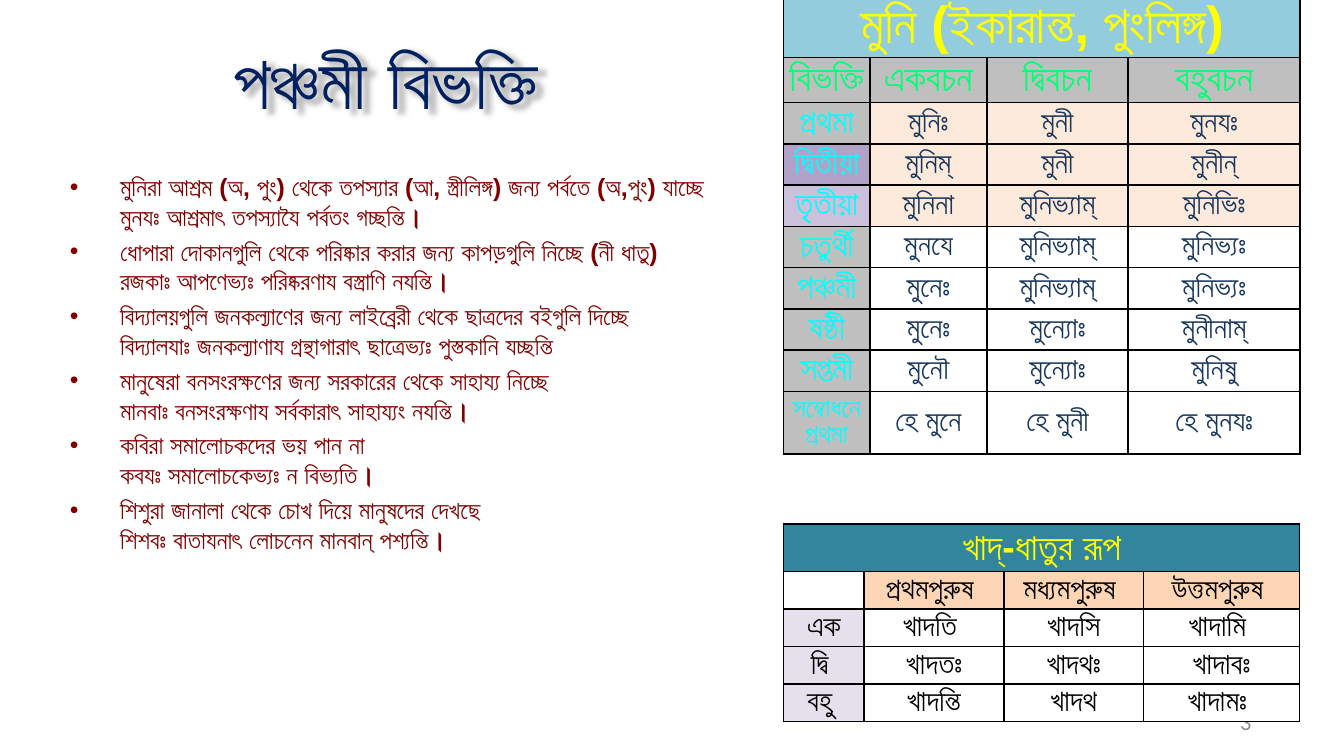
"""Build a Bengali-script slide on the fifth case, with a declension and a conjugation table."""
from dataclasses import dataclass

from lxml import etree
from pptx import Presentation
from pptx.dml.color import RGBColor
from pptx.enum.text import MSO_ANCHOR, PP_ALIGN
from pptx.oxml.ns import qn
from pptx.util import Cm, Pt

CENTER, LEFT, RIGHT = PP_ALIGN.CENTER, PP_ALIGN.LEFT, PP_ALIGN.RIGHT
TOP, MIDDLE = MSO_ANCHOR.TOP, MSO_ANCHOR.MIDDLE
BLACK, WHITE, YELLOW, CYAN, GREY = "000000", "FFFFFF", "FFFF00", "00FFFF", "BFBFBF"
PEACH = "FDEADA"
HANGING = Cm(0.95)


@dataclass(frozen=True)
class Style:
    size: float
    color: str
    font: str = "Arial"
    bold: bool = True


@dataclass(frozen=True)
class TextBox:
    left: float
    top: float
    width: float
    height: float
    paragraphs: tuple
    style: Style
    align: PP_ALIGN
    anchor: MSO_ANCHOR


@dataclass(frozen=True)
class Row:
    height: float
    words: tuple
    label_style: Style
    word_style: Style
    label_fill: str
    word_fill: str


@dataclass(frozen=True)
class Grid:
    left: float
    top: float
    widths: tuple
    side_margin: float
    rows: tuple


TITLE = TextBox(2.11, 0.53, 10.36, 1.96, ("পঞ্চমী বিভক্তি",), Style(40, "002060"), CENTER, MIDDLE)
SENTENCES = TextBox(1.07, 3.12, 12.9, 10.8, (
    "মুনিরা আশ্রম (অ, পুং) থেকে তপস্যার (আ, স্ত্রীলিঙ্গ) জন্য পর্বতে (অ,পুং) যাচ্ছে\n"
    "মুনযঃ আশ্রমাৎ তপস্যাযৈ পর্বতং গচ্ছন্তি।",
    "ধোপারা দোকানগুলি থেকে পরিষ্কার করার জন্য কাপড়গুলি নিচ্ছে (নী ধাতু)\n"
    "রজকাঃ আপণেভ্যঃ পরিষ্করণায বস্ত্রাণি নযন্তি।",
    "বিদ্যালয়গুলি জনকল্যাণের জন্য লাইব্রেরী থেকে ছাত্রদের বইগুলি দিচ্ছে\n"
    "বিদ্যালযাঃ জনকল্যাণায গ্রন্থাগারাৎ ছাত্রেভ্যঃ পুস্তকানি যচ্ছন্তি",
    "মানুষেরা বনসংরক্ষণের জন্য সরকারের থেকে সাহায্য নিচ্ছে\n"
    "মানবাঃ বনসংরক্ষণায সর্বকারাৎ সাহায্যং নযন্তি।",
    "কবিরা সমালোচকদের ভয় পান না\nকবযঃ সমালোচকেভ্যঃ ন বিভ্যতি।",
    "শিশুরা জানালা থেকে চোখ দিয়ে মানুষদের দেখছে\n"
    "শিশবঃ বাতাযনাৎ লোচনেন মানবান্ পশ্যন্তি।",
), Style(13.3, "800000"), LEFT, TOP)
SLIDE_NUMBER = TextBox(17.98, 13.26, 5.92, 0.76, ("3",),
                       Style(12, "8C8C8C", "Calibri", False), RIGHT, MIDDLE)

CASE_HEADING = Style(28, YELLOW)
NUMBER_HEADING = Style(20, "01FF74", "Calibri")
CASE_LABEL = Style(18, CYAN, "Calibri")
VOCATIVE_LABEL = Style(14, CYAN, "Calibri")
CASE_FORM = Style(16, "17365D", "Calibri")
CASES = (
    (("প্রথমা", "মুনিঃ", "মুনী", "মুনযঃ"), GREY, PEACH),
    (("দ্বিতীয়া", "মুনিম্", "মুনী", "মুনীন্"), "B3A2C7", PEACH),
    (("তৃতীয়া", "মুনিনা", "মুনিভ্যাম্", "মুনিভিঃ"), "CCC1DA", PEACH),
    (("চতুর্থী", "মুনযে", "মুনিভ্যাম্", "মুনিভ্যঃ"), GREY, WHITE),
    (("পঞ্চমী", "মুনেঃ", "মুনিভ্যাম্", "মুনিভ্যঃ"), GREY, WHITE),
    (("ষষ্ঠী", "মুনেঃ", "মুন্যোঃ", "মুনীনাম্"), GREY, WHITE),
    (("সপ্তমী", "মুনৌ", "মুন্যোঃ", "মুনিষু"), GREY, WHITE),
)
DECLENSION = Grid(14.81, -0.15, (1.63, 2.21, 2.67, 3.25), 0, (
    Row(1.24, ("মুনি (ইকারান্ত, পুংলিঙ্গ)",), CASE_HEADING, CASE_HEADING, "93CDDD", "93CDDD"),
    Row(0.81, ("বিভক্তি", "একবচন", "দ্বিবচন", "বহুবচন"),
        NUMBER_HEADING, NUMBER_HEADING, GREY, GREY),
    *(Row(0.78, words, CASE_LABEL, CASE_FORM, label_fill, word_fill)
      for words, label_fill, word_fill in CASES),
    Row(1.09, ("সম্বোধনে প্রথমা", "হে মুনে", "হে মুনী", "হে মুনযঃ"),
        VOCATIVE_LABEL, CASE_FORM, GREY, WHITE),
))

VERB_HEADING = Style(20, YELLOW)
VERB_FORM = Style(16, BLACK)
PERSONS = (
    ("এক", "খাদতি ", "খাদসি", "খাদামি "),
    ("দ্বি ", "খাদতঃ", "খাদথঃ", "খাদাবঃ"),
    ("বহু ", "খাদন্তি", "খাদথ", "খাদামঃ "),
)
CONJUGATION = Grid(14.81, 9.9, (1.52, 2.64, 2.64, 2.95), 0.18, (
    Row(0.9, ("খাদ্-ধাতুর রূপ",), VERB_HEADING, VERB_HEADING, "31859C", "31859C"),
    Row(0.71, ("", "প্রথমপুরুষ ", "মধ্যমপুরুষ ", "উত্তমপুরুষ "),
        VERB_FORM, VERB_FORM, WHITE, "FCD5B5"),
    *(Row(0.71, words, VERB_FORM, VERB_FORM, "E6E0EC", WHITE) for words in PERSONS),
))


def rgb(value: str) -> RGBColor:
    return RGBColor.from_string(value)


def style_paragraph(paragraph, style: Style, align: PP_ALIGN) -> None:
    paragraph.alignment = align
    paragraph.font.size = Pt(style.size)
    paragraph.font.name = style.font
    paragraph.font.bold = style.bold
    paragraph.font.color.rgb = rgb(style.color)


def draw_text(slide, box: TextBox):
    shape = slide.shapes.add_textbox(Cm(box.left), Cm(box.top), Cm(box.width), Cm(box.height))
    frame = shape.text_frame
    frame.word_wrap = True
    frame.vertical_anchor = box.anchor
    for index, text in enumerate(box.paragraphs):
        paragraph = frame.add_paragraph() if index else frame.paragraphs[0]
        paragraph.text = text
        style_paragraph(paragraph, box.style, box.align)
    return shape


def add_bullets(shape) -> None:
    for paragraph in shape.text_frame.paragraphs:
        paragraph.space_before = Pt(2.7)
        properties = paragraph._p.get_or_add_pPr()
        properties.set("marL", str(HANGING))
        properties.set("indent", str(-HANGING))
        defaults = properties.find(qn("a:defRPr"))
        defaults.addprevious(etree.Element(qn("a:buFont"), typeface="Arial"))
        defaults.addprevious(etree.Element(qn("a:buChar"), char="•"))


def add_text_shadow(shape) -> None:
    shape.shadow.inherit = False
    effects = shape._element.spPr.find(qn("a:effectLst"))
    shadow = etree.SubElement(effects, qn("a:outerShdw"), blurRad=str(Pt(3)), dist=str(Pt(3)),
                              dir="2700000", algn="tl", rotWithShape="0")
    color = etree.SubElement(shadow, qn("a:srgbClr"), val=BLACK)
    etree.SubElement(color, qn("a:alpha"), val="25000")


def add_borders(cell) -> None:
    properties = cell._tc.get_or_add_tcPr()
    for index, side in enumerate(("a:lnL", "a:lnR", "a:lnT", "a:lnB")):
        line = etree.Element(qn(side), w=str(Pt(1)))
        fill = etree.SubElement(line, qn("a:solidFill"))
        etree.SubElement(fill, qn("a:srgbClr"), val=BLACK)
        properties.insert(index, line)


def draw_cell(cell, text: str, style: Style, fill: str, side_margin: float) -> None:
    cell.fill.solid()
    cell.fill.fore_color.rgb = rgb(fill)
    cell.margin_left = cell.margin_right = Cm(side_margin)
    cell.margin_top = cell.margin_bottom = 0
    cell.vertical_anchor = MIDDLE
    paragraph = cell.text_frame.paragraphs[0]
    paragraph.text = text
    style_paragraph(paragraph, style, CENTER)
    add_borders(cell)


def draw_table(slide, grid: Grid) -> None:
    columns = len(grid.widths)
    height = sum(row.height for row in grid.rows)
    table = slide.shapes.add_table(len(grid.rows), columns, Cm(grid.left), Cm(grid.top),
                                   Cm(sum(grid.widths)), Cm(height)).table
    for column, width in zip(table.columns, grid.widths):
        column.width = Cm(width)
    table.cell(0, 0).merge(table.cell(0, columns - 1))
    for row_index, row in enumerate(grid.rows):
        table.rows[row_index].height = Cm(row.height)
        words = row.words + ("",) * (columns - len(row.words))
        for column_index, word in enumerate(words):
            style = row.word_style if column_index else row.label_style
            fill = row.word_fill if column_index else row.label_fill
            draw_cell(table.cell(row_index, column_index), word, style, fill, grid.side_margin)


def main() -> None:
    presentation = Presentation()
    presentation.slide_width, presentation.slide_height = Cm(25.4), Cm(14.29)
    slide = presentation.slides.add_slide(presentation.slide_layouts[6])
    add_text_shadow(draw_text(slide, TITLE))
    add_bullets(draw_text(slide, SENTENCES))
    draw_text(slide, SLIDE_NUMBER)
    for grid in (DECLENSION, CONJUGATION):
        draw_table(slide, grid)
    presentation.save("out.pptx")


if __name__ == "__main__":
    main()
